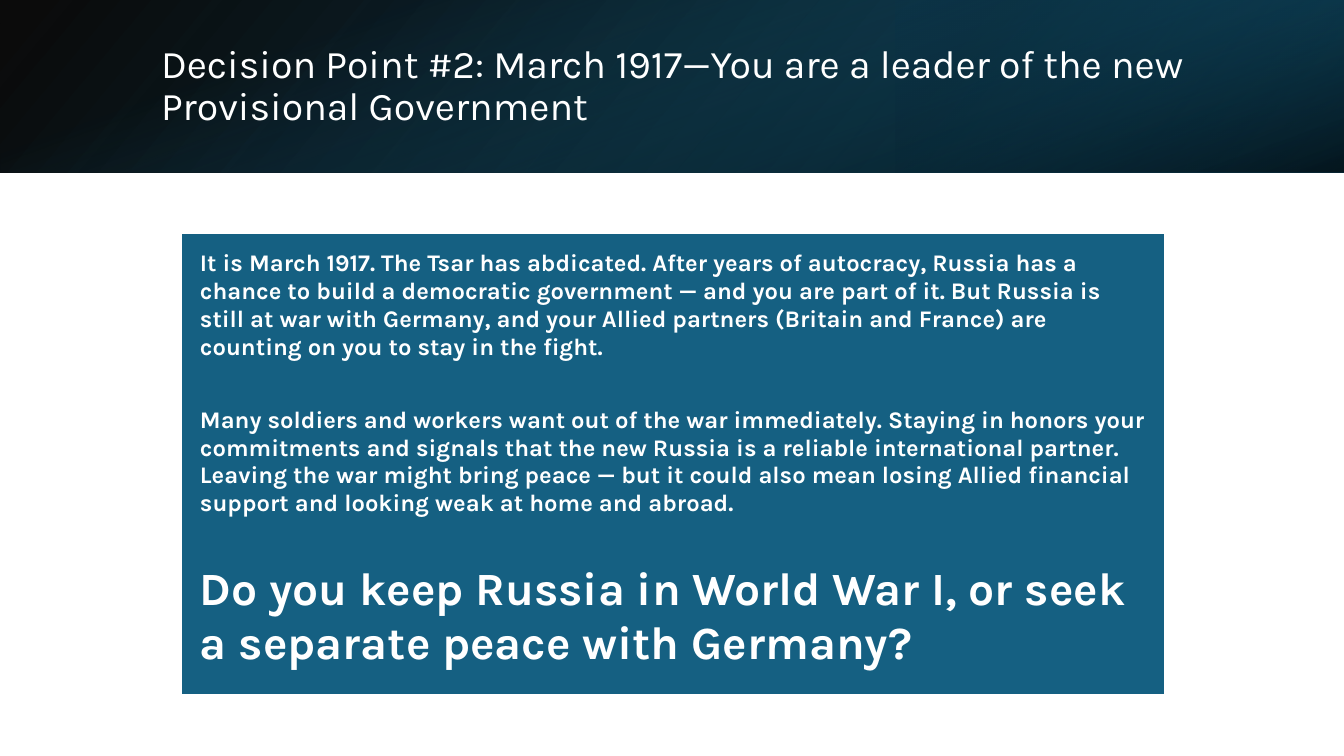
import pptx
import pptx.util
import pptx.oxml
import pptx.oxml.ns
import pptx.dml.color
import pptx.enum.shapes
import pptx.enum.text

RGB = pptx.dml.color.RGBColor
WHITE = RGB(0xFF, 0xFF, 0xFF)
BLACK = RGB(0x00, 0x00, 0x00)
BLUE = RGB(0x15, 0x60, 0x82)
DEEP_BLUE = RGB(0x10, 0x48, 0x62)
NIGHT_BLUE = RGB(0x0B, 0x30, 0x41)
FONT = "Karla"

# Content
TITLE = "Decision Point #2: March 1917—You are a leader of the new Provisional Government"
PARAGRAPHS = [
    ("It is March 1917. The Tsar has abdicated. After years of autocracy, Russia has a "
     "chance to build a democratic government — and you are part of it. But Russia is "
     "still at war with Germany, and your Allied partners (Britain and France) are "
     "counting on you to stay in the fight.", 17),
    ("Many soldiers and workers want out of the war immediately. Staying in honors your "
     "commitments and signals that the new Russia is a reliable international partner. "
     "Leaving the war might bring peace — but it could also mean losing Allied financial "
     "support and looking weak at home and abroad.", 17),
    ("Do you keep Russia in World War I, or seek a separate peace with Germany?", 33),
]
PARAGRAPH_GAP = 32

# Layout in px
W, H = 1344, 756
BAND_H = 173
TITLE_BOX = (151, 38, 1107, 97)
TABLE_BOX = (181, 233, 984, 463)
CELL_INSETS = {"margin_left": 19, "margin_right": 19, "margin_top": 17, "margin_bottom": 17}
BORDERS = {"lnL": 1, "lnR": 1, "lnT": 1, "lnB": 3}

# Band layers: box, rotation, flipped, clockwise angle, stops (position %, colour, opacity %)
BAND_LAYERS = [
    ((0, 0, W, BAND_H), 0, True, 140, [(0, BLACK, 96), (100, DEEP_BLUE, 100)]),
    ((W * 2 // 3, 0, W // 3, BAND_H), 180, True, 320,
     [(19, NIGHT_BLUE, 68), (100, BLUE, 79)]),
    (((W - BAND_H) / 2, (BAND_H - W) / 2, BAND_H, W), 90, False, 340,
     [(23, BLUE, 0), (99, BLACK, 74)]),
]


def px(n):
    return pptx.util.Emu(round(n * 914400 / 100.8))


def apply(obj, values):
    for name, value in values.items():
        setattr(obj, name, value)


def add_band_layer(shapes, box, rotation, flipped, angle, stops):
    sp = shapes.add_shape(pptx.enum.shapes.MSO_SHAPE.RECTANGLE, *map(px, box))
    sp.rotation = rotation
    sp.shadow.inherit = False
    sp.line.fill.background()
    if flipped:
        sp.element.spPr.xfrm.set("flipH", "1")
    sp.fill.gradient()
    sp.fill.gradient_angle = 360 - angle
    for stop, (position, colour, _) in zip(sp.fill.gradient_stops, stops):
        stop.position = position / 100
        stop.color.rgb = colour
    colours = sp.element.spPr.iter(pptx.oxml.ns.qn("a:srgbClr"))
    for clr, (_, _, opacity) in zip(list(colours), stops):
        if opacity < 100:
            clr.append(pptx.oxml.parse_xml(
                f'<a:alpha {pptx.oxml.ns.nsdecls("a")} val="{opacity * 1000}"/>'))


def add_text(p, text, size, bold):
    r = p.add_run()
    r.text = text
    apply(r.font, {"name": FONT, "size": pptx.util.Pt(size), "bold": bold})
    r.font.color.rgb = WHITE


def main():
    prs = pptx.Presentation()
    apply(prs, {"slide_width": px(W), "slide_height": px(H)})
    slide = prs.slides.add_slide(prs.slide_layouts[5])
    shapes = slide.shapes

    # Gradient band
    for layer in BAND_LAYERS:
        add_band_layer(shapes, *layer)

    # Title, in front of the band
    title = shapes.title
    title.element.getparent().append(title.element)
    apply(title, dict(zip(("left", "top", "width", "height"), map(px, TITLE_BOX))))
    tf = title.text_frame
    apply(tf, {"word_wrap": True, "auto_size": pptx.enum.text.MSO_AUTO_SIZE.NONE,
               "vertical_anchor": pptx.enum.text.MSO_ANCHOR.MIDDLE})
    p = tf.paragraphs[0]
    apply(p, {"alignment": pptx.enum.text.PP_ALIGN.LEFT, "line_spacing": 0.9})
    add_text(p, TITLE, 28, False)

    # Scenario table
    table = shapes.add_table(1, 1, *map(px, TABLE_BOX)).table
    apply(table, {"first_row": False, "horz_banding": False})
    cell = table.cell(0, 0)
    apply(cell, {name: px(n) for name, n in CELL_INSETS.items()})
    tcPr = cell.fill and cell._tc.get_or_add_tcPr()
    for tag, width in BORDERS.items():
        tcPr.append(pptx.oxml.parse_xml(
            f'<a:{tag} {pptx.oxml.ns.nsdecls("a")} w="{pptx.util.Pt(width)}">'
            f'<a:solidFill><a:srgbClr val="{WHITE}"/></a:solidFill></a:{tag}>'))
    cell.fill.solid()
    cell.fill.fore_color.rgb = BLUE
    tf = cell.text_frame
    for i, (text, size) in enumerate(PARAGRAPHS):
        p = tf.add_paragraph() if i else tf.paragraphs[0]
        if i:
            p.space_before = pptx.util.Pt(PARAGRAPH_GAP)
        add_text(p, text, size, True)

    prs.save("out.pptx")


if __name__ == "__main__":
    main()
